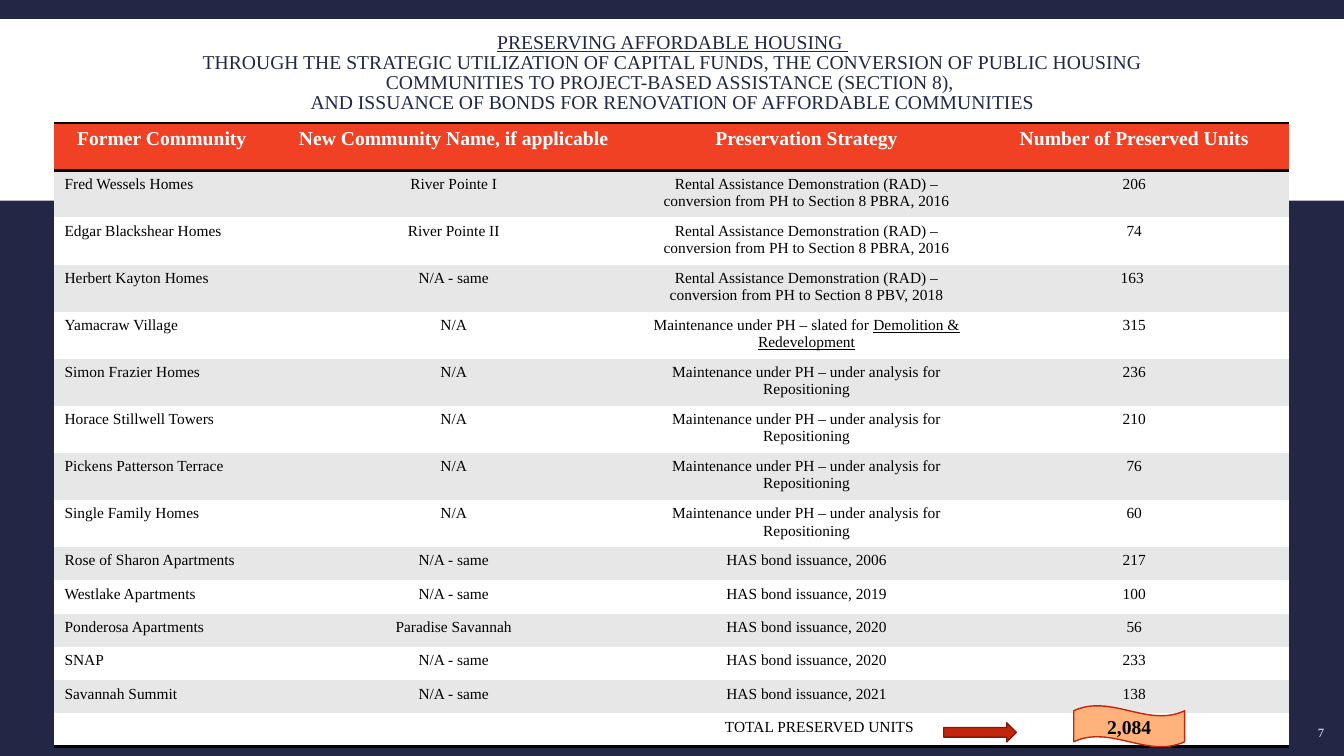
from lxml.etree import SubElement as Sub
from pptx import Presentation
from pptx.dml.color import RGBColor
from pptx.enum.shapes import MSO_SHAPE as Shape
from pptx.enum.text import MSO_ANCHOR as Anchor, PP_ALIGN as Align
from pptx.oxml.ns import qn
from pptx.util import Inches, Pt

FONT = "Times New Roman"
NAVY, WHITE, BLACK, GRAY = "212745", "FFFFFF", "000000", "E7E7E7"
ORANGE, PEACH, RED, MAROON = "F14124", "FFB37A", "C3260C", "821A08"
PLAIN = "{2D5ABB26-0587-4C30-8999-92F81FD0307C}"

TITLE = (
    "_PRESERVING AFFORDABLE HOUSING \v_"
    "THROUGH THE STRATEGIC UTILIZATION OF CAPITAL FUNDS, THE CONVERSION OF "
    "PUBLIC HOUSING COMMUNITIES TO PROJECT-BASED ASSISTANCE (SECTION 8), \v"
    "AND ISSUANCE OF BONDS FOR RENOVATION OF AFFORDABLE COMMUNITIES"
)
RAD = "Rental Assistance Demonstration (RAD) – conversion from PH to Section 8 "
KEEP = "Maintenance under PH – "
STUDY = KEEP + "under analysis for Repositioning"
BOND = "HAS bond issuance, "
SAME = "N/A - same"
WIDTHS = [2.18, 3.56, 3.44, 3.06]
HEAD = ["Former Community ", "New Community Name, if applicable",
        "Preservation Strategy", "Number of Preserved Units"]
ROWS = [
    ["Fred Wessels Homes", "River Pointe I", RAD + "PBRA, 2016", "206"],
    ["Edgar Blackshear Homes", "River Pointe II", RAD + "PBRA, 2016", "74"],
    ["Herbert Kayton Homes", SAME, RAD + "PBV, 2018", "163 "],
    ["Yamacraw Village", "N/A",
     KEEP + "slated for _Demolition & Redevelopment_", "315"],
    ["Simon Frazier Homes", "N/A", STUDY, "236"],
    ["Horace Stillwell Towers", "N/A", STUDY, "210"],
    ["Pickens Patterson Terrace", "N/A", STUDY, "76"],
    ["Single Family Homes", "N/A", STUDY, "60"],
    ["Rose of Sharon Apartments", SAME, BOND + "2006", "217"],
    ["Westlake Apartments", SAME, BOND + "2019", "100"],
    ["Ponderosa Apartments", "Paradise Savannah", BOND + "2020", "56"],
    ["SNAP", SAME, BOND + "2020", "233"],
    ["Savannah Summit", SAME, BOND + "2021", "138"],
    ["", "", "TOTAL PRESERVED UNITS", ""],
]


def color(code):
    return RGBColor.from_string(code)


def write(frame, text, size, ink, bold=False, align=Align.CENTER):
    para = frame.paragraphs[0]
    para.alignment = align
    font = para.font
    font.name, font.size, font.bold = FONT, Pt(size), bold
    font.color.rgb = color(ink)
    for spot, part in enumerate(text.split("_")):
        for step, line in enumerate(part.split("\v")):
            if step:
                para.add_line_break()
            if line:
                run = para.add_run()
                run.text = line
                if spot % 2:
                    run.font.underline = True
    if not text:
        Sub(para._p, qn("a:endParaRPr"), sz=str(size * 100))
    return para


def add_box(slide, box, kind, fill, line=None):
    shape = slide.shapes.add_shape(kind, *map(Inches, box))
    shape.shadow.inherit = False
    shape.fill.solid()
    shape.fill.fore_color.rgb = color(fill)
    if line:
        shape.line.color.rgb = color(line)
        shape.line.width = Pt(1)
    else:
        shape.line.fill.background()
    return shape


def add_text(slide, box):
    frame = slide.shapes.add_textbox(*map(Inches, box)).text_frame
    frame.word_wrap = True
    frame.vertical_anchor = Anchor.MIDDLE
    return frame


def add_title(slide, box):
    write(add_text(slide, box), TITLE, 14, NAVY).line_spacing = 0.85


def add_edge(cell, side):
    edge = Sub(cell._tc.get_or_add_tcPr(), qn("a:ln" + side), w=str(Pt(2)))
    Sub(Sub(edge, qn("a:solidFill")), qn("a:srgbClr"), val=BLACK)


def fill_cell(cell, text, row, col):
    last = row == len(ROWS)
    for side in "TB" if row == 0 else "B" if last else "":
        add_edge(cell, side)
    cell.fill.solid()
    cell.fill.fore_color.rgb = color(
        ORANGE if row == 0 else GRAY if row % 2 else WHITE)
    if row == 0:
        write(cell.text_frame, text, 14, WHITE, True)
    else:
        align = Align.LEFT if col == 0 or last else Align.CENTER
        write(cell.text_frame, text, 11, BLACK, align=align)
    if last and text:
        cell.margin_left = Inches(0.91)


def add_grid(slide, box):
    rows = [HEAD] + ROWS
    table = slide.shapes.add_table(
        len(rows), len(HEAD), *map(Inches, box)).table
    table._tbl.tblPr.find(qn("a:tableStyleId")).text = PLAIN
    for col, width in enumerate(WIDTHS):
        table.columns[col].width = Inches(width)
    for row, texts in enumerate(rows):
        table.rows[row].height = Inches(0.33 if row else 0.47)
        for col, text in enumerate(texts):
            fill_cell(table.cell(row, col), text, row, col)


def add_total(slide, box):
    left, top, width, height = box
    wave = add_box(slide, (left + 1.29, top, 1.1, height),
                   Shape.WAVE, PEACH, RED)
    wave.text_frame.vertical_anchor = Anchor.MIDDLE
    write(wave.text_frame, "2,084", 14, BLACK, True)
    add_box(slide, (left, top + 0.17, 0.72, 0.19),
            Shape.RIGHT_ARROW, RED, MAROON)


def add_page(slide, box):
    frame = add_text(slide, box)
    frame.margin_left = Inches(0.05)
    frame.word_wrap = False
    write(frame, "7", 9, WHITE, align=Align.LEFT)


def main():
    deck = Presentation()
    deck.slide_width, deck.slide_height = Inches(13.33), Inches(7.5)
    slide = deck.slides.add_slide(deck.slide_layouts[6])
    back = slide.background.fill
    back.solid()
    back.fore_color.rgb = color(NAVY)
    add_box(slide, (0, 0.19, 13.33, 1.8), Shape.RECTANGLE, WHITE)
    add_title(slide, (1.32, 0.19, 10.7, 1.08))
    add_grid(slide, (0.54, 1.22, 12.25, 5.09))
    add_total(slide, (9.36, 7, 2.39, 0.41))
    add_page(slide, (13.02, 7.11, 0.17, 0.32))
    deck.save("out.pptx")


if __name__ == "__main__":
    main()
